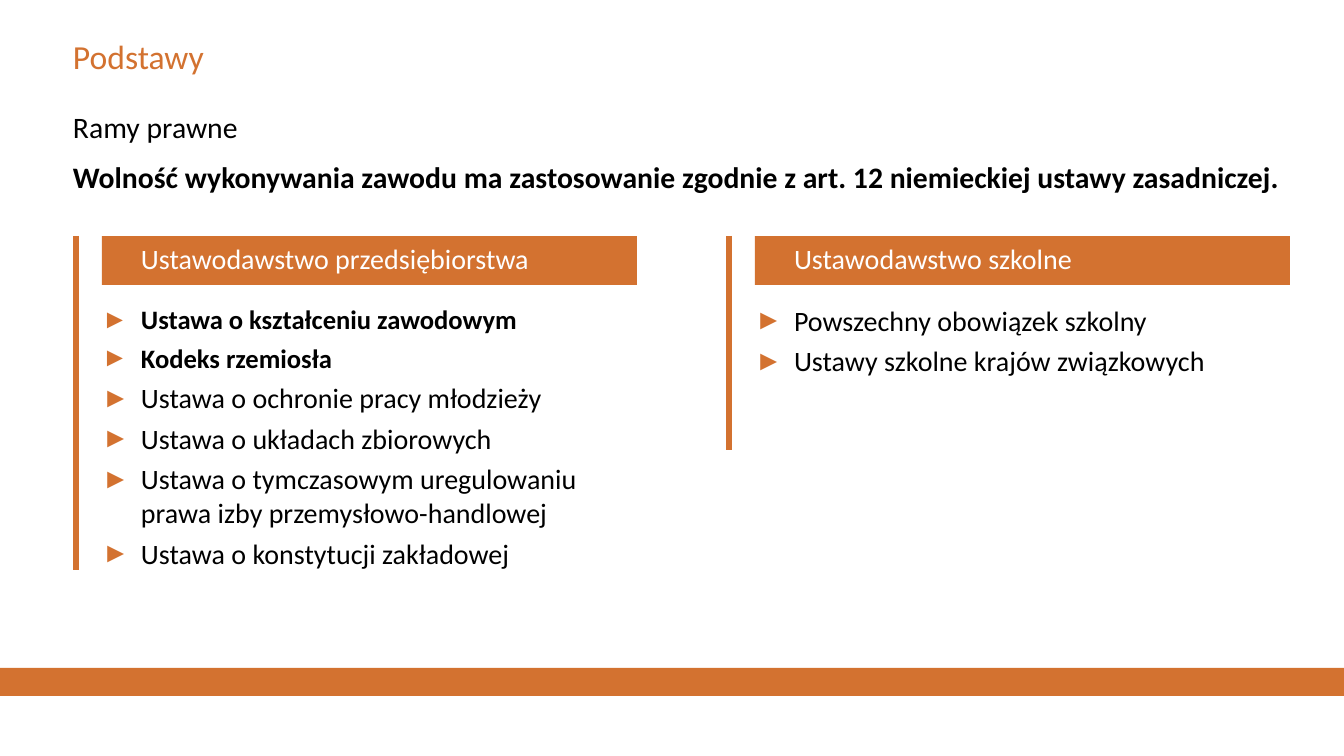
from lxml import etree
from pptx import Presentation
from pptx.dml.color import RGBColor
from pptx.enum.shapes import MSO_CONNECTOR, MSO_SHAPE
from pptx.enum.text import MSO_ANCHOR, MSO_AUTO_SIZE, PP_ALIGN
from pptx.oxml.ns import qn
from pptx.util import Pt

ORANGE = RGBColor(0xD3, 0x72, 0x30)
BLACK = RGBColor(0, 0, 0)
WHITE = RGBColor(0xFF, 0xFF, 0xFF)
FONT = "Calibri"
LINE = MSO_CONNECTOR.STRAIGHT
RECT = MSO_SHAPE.RECTANGLE
LEFT = PP_ALIGN.LEFT
TOP, MIDDLE = MSO_ANCHOR.TOP, MSO_ANCHOR.MIDDLE
NO_FIT = MSO_AUTO_SIZE.NONE

SLIDE_W, SLIDE_H = 1344, 756
PANEL_W, PANEL_TOP, HEADING_H = 535, 236, 49
LIST_TOP, LIST_H = 303, 288
INDENT, RAIL_GAP = 39, 26

COMPANY_LAWS = [
    ("Ustawa o kształceniu zawodowym", True),
    ("Kodeks rzemiosła", True),
    ("Ustawa o ochronie pracy młodzieży", False),
    ("Ustawa o układach zbiorowych", False),
    ("Ustawa o tymczasowym uregulowaniu prawa izby przemysłowo-handlowej", False),
    ("Ustawa o konstytucji zakładowej", False),
]
SCHOOL_LAWS = [
    ("Powszechny obowiązek szkolny", False),
    ("Ustawy szkolne krajów związkowych", False),
]


def px(n):
    return round(n * 914400 / 100.8)


def place(sp, x, y, w, h):
    sp.left, sp.top, sp.width, sp.height = px(x), px(y), px(w), px(h)


def setup_frame(sp, anchor=TOP, inset=0):
    tf = sp.text_frame
    tf.word_wrap = True
    tf.auto_size = NO_FIT
    tf.vertical_anchor = anchor
    tf.margin_left = px(inset)
    tf.margin_top = tf.margin_right = tf.margin_bottom = 0
    return tf


def format_paragraph(p, size, color, bold=False, spacing=1.0, before=0):
    p.alignment = LEFT
    p.line_spacing = spacing
    p.space_before = Pt(before)
    for r in p.runs:
        r.font.name = FONT
        r.font.size = Pt(size)
        r.font.bold = bold
        r.font.color.rgb = color


def add_bullet(p):
    pPr = p._p.get_or_add_pPr()
    pPr.set("marL", str(px(INDENT)))
    pPr.set("indent", str(-px(INDENT)))
    color = etree.SubElement(pPr, qn("a:buClr"))
    etree.SubElement(color, qn("a:srgbClr"), val=str(ORANGE))
    etree.SubElement(pPr, qn("a:buChar"), char="►")


def set_title(sp, text):
    place(sp, 73, 32, 992, 49)
    tf = setup_frame(sp, MIDDLE)
    tf.text = text
    format_paragraph(tf.paragraphs[0], 24, ORANGE)


def add_intro(s, heading, statement):
    tf = setup_frame(s.shapes.add_textbox(px(73), px(116), px(1219), px(111)))
    tf.text = f"{heading}\n{statement}"
    first, second = tf.paragraphs
    format_paragraph(first, 21.2, BLACK, spacing=0.8)
    format_paragraph(second, 21.2, BLACK, bold=True, spacing=0.95, before=12)


def set_heading(sp, x, text):
    place(sp, x, PANEL_TOP, PANEL_W, HEADING_H)
    sp.fill.solid()
    sp.fill.fore_color.rgb = ORANGE
    tf = setup_frame(sp, MIDDLE, INDENT)
    tf.text = text
    format_paragraph(tf.paragraphs[0], 20, WHITE, spacing=0.9)


def set_list(sp, x, items):
    place(sp, x, LIST_TOP, PANEL_W, LIST_H)
    tf = setup_frame(sp)
    tf.text = "\n".join(text for text, _ in items)
    for i, (p, (_, bold)) in enumerate(zip(tf.paragraphs, items)):
        add_bullet(p)
        format_paragraph(p, 19 if bold else 20, BLACK, bold, before=5 if i else 0)


def add_rail(s, x, bottom):
    """Draw the vertical line beside a panel."""
    line = s.shapes.add_connector(LINE, px(x), px(PANEL_TOP), px(x), px(bottom))
    line.line.color.rgb = ORANGE
    line.line.width = Pt(4.5)
    etree.SubElement(line._element.spPr, qn("a:effectLst"))


def add_footer_band(s):
    band = s.shapes.add_shape(RECT, 0, px(668), px(SLIDE_W), px(28))
    band.shadow.inherit = False
    band.fill.solid()
    band.fill.fore_color.rgb = ORANGE
    band.line.fill.background()


def main():
    prs = Presentation()
    prs.slide_width, prs.slide_height = px(SLIDE_W), px(SLIDE_H)
    s = prs.slides.add_slide(prs.slide_layouts.get_by_name("Comparison"))
    title, *panels = s.placeholders
    add_footer_band(s)
    set_title(title, "Podstawy")
    add_intro(
        s,
        "Ramy prawne",
        "Wolność wykonywania zawodu ma zastosowanie zgodnie z art. 12 "
        "niemieckiej ustawy zasadniczej.",
    )
    columns = [
        (102, 570, "Ustawodawstwo przedsiębiorstwa", COMPANY_LAWS),
        (755, 450, "Ustawodawstwo szkolne", SCHOOL_LAWS),
    ]
    for i, (x, rail_bottom, heading, laws) in enumerate(columns):
        set_heading(panels[2 * i], x, heading)
        set_list(panels[2 * i + 1], x, laws)
        add_rail(s, x - RAIL_GAP, rail_bottom)
    prs.save("out.pptx")


if __name__ == "__main__":
    main()
